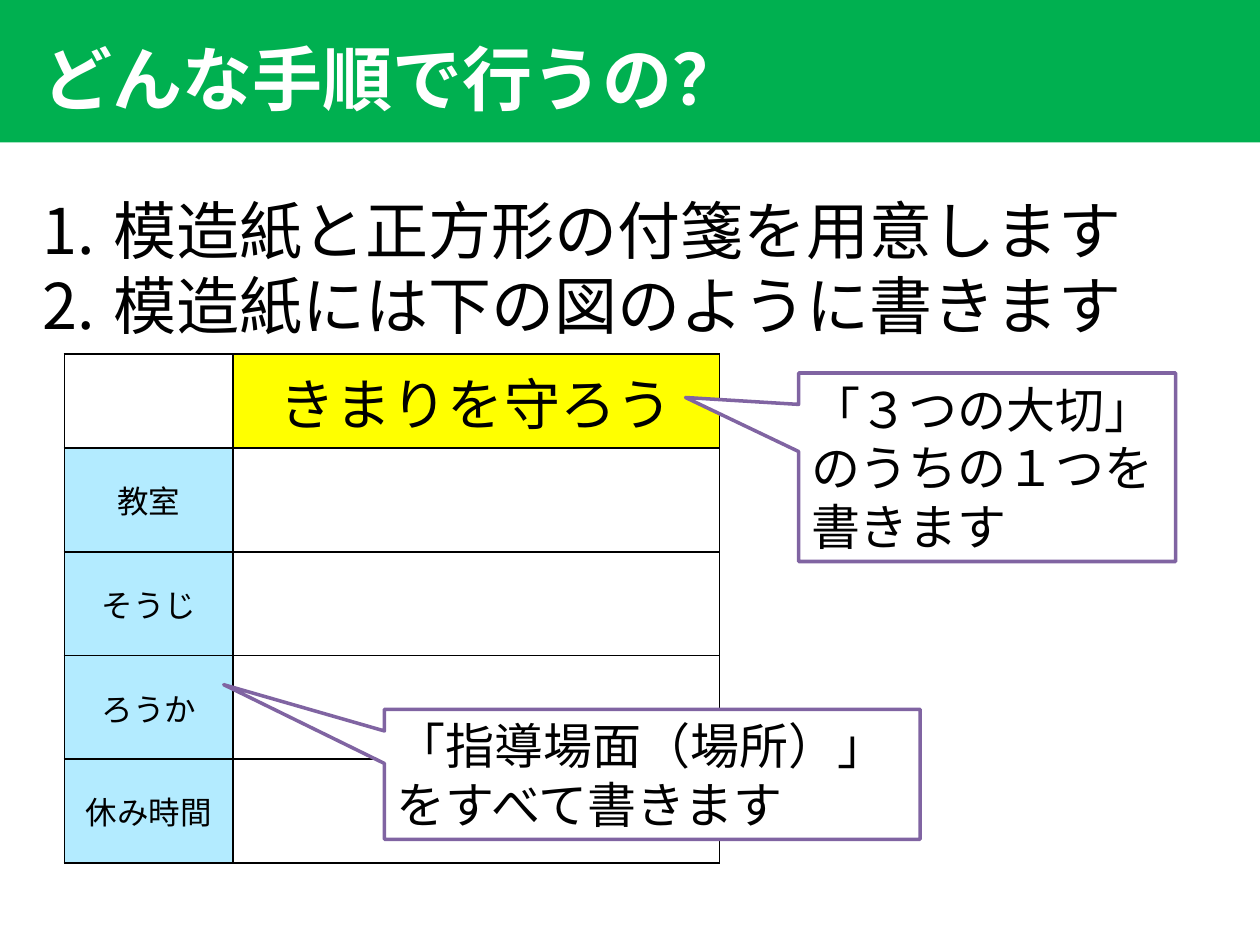
from lxml import etree
from pptx import Presentation
from pptx import util as u
from pptx.dml.color import RGBColor
from pptx.enum import shapes, text
from pptx.oxml import ns

COLORS = {
    "green": "00B050",
    "white": "FFFFFF",
    "black": "000000",
    "yellow": "FFFF00",
    "sky": "B3EBFF",
    "purple": "8064A2",
}


def sub(parent, tag, **attrs):
    return etree.SubElement(parent, ns.qn(tag), **attrs)


class Deck:
    font = "Arial"

    def __init__(self):
        self.prs = Presentation()
        self.prs.slide_width = u.Cm(25.4)
        self.prs.slide_height = u.Cm(19.05)
        self.s = self.prs.slides.add_slide(self.prs.slide_layouts[1])

    def color(self, name):
        return RGBColor.from_string(COLORS[name])

    def paint(self, obj, name):
        obj.fill.solid()
        obj.fill.fore_color.rgb = self.color(name)

    def style(self, p, size, color="black", bold=False, align=text.PP_ALIGN.LEFT):
        p.font.name = self.font
        p.font.size = u.Pt(size)
        p.font.bold = bold
        p.font.color.rgb = self.color(color)
        p.alignment = align

    def place(self, sp, box):
        sp.left, sp.top, sp.width, sp.height = (u.Cm(v) for v in box)

    def shape(self, kind, box, fill, line=None):
        sp = self.s.shapes.add_shape(kind, *(u.Cm(v) for v in box))
        sp.shadow.inherit = False
        self.paint(sp, fill)
        if line:
            sp.line.color.rgb = self.color(line)
            sp.line.width = u.Pt(2)
        else:
            sp.line.fill.background()
        return sp

    def title(self, words, box, bar_box):
        sp = self.s.shapes.title
        bar = self.shape(shapes.MSO_SHAPE.RECTANGLE, bar_box, "green")
        sp.element.addprevious(bar.element)
        self.place(sp, box)
        self.paint(sp, "green")
        tf = sp.text_frame
        tf.text = words
        tf.auto_size = text.MSO_AUTO_SIZE.NONE
        tf.vertical_anchor = text.MSO_ANCHOR.MIDDLE
        self.style(tf.paragraphs[0], 40, "white", True)

    def steps(self, lines, box):
        sp = self.s.placeholders[1]
        self.place(sp, box)
        tf = sp.text_frame
        tf.text = "\n".join(lines)
        tf.auto_size = text.MSO_AUTO_SIZE.NONE
        tf.vertical_anchor = text.MSO_ANCHOR.TOP
        indent = u.Cm(1.43)
        for p in tf.paragraphs:
            self.style(p, 36)
            p.space_before = u.Pt(0)
            pPr = p._p.get_or_add_pPr()
            pPr.set("marL", str(indent))
            pPr.set("indent", str(-indent))
            sub(pPr, "a:buFont", typeface="+mj-lt")
            sub(pPr, "a:buAutoNum", type="arabicPeriod")

    def borders(self, cell):
        tcPr = cell._tc.get_or_add_tcPr()
        for i, side in enumerate(("a:lnL", "a:lnR", "a:lnT", "a:lnB")):
            ln = sub(tcPr, side, w=str(u.Pt(1)))
            sub(sub(ln, "a:solidFill"), "a:srgbClr", val=COLORS["black"])
            tcPr.insert(i, ln)

    def table(self, rows, left, top, widths, heights):
        box = (left, top, sum(widths), sum(heights))
        tbl = self.s.shapes.add_table(
            len(heights), len(widths), *(u.Cm(v) for v in box)).table
        for col, width in zip(tbl.columns, widths):
            col.width = u.Cm(width)
        for row, height in zip(tbl.rows, heights):
            row.height = u.Cm(height)
        for r, row in enumerate(rows):
            for c, words in enumerate(row):
                cell = tbl.cell(r, c)
                cell.text = words
                cell.vertical_anchor = text.MSO_ANCHOR.MIDDLE
                fill = "white" if not words else "yellow" if r == 0 else "sky"
                self.paint(cell, fill)
                self.style(cell.text_frame.paragraphs[0], 32 if r == 0 else 18,
                           align=text.PP_ALIGN.CENTER)
                self.borders(cell)

    def callout(self, words, box, tip):
        sp = self.shape(shapes.MSO_SHAPE.RECTANGULAR_CALLOUT, box, "white", "purple")
        sp.adjustments[0], sp.adjustments[1] = tip
        tf = sp.text_frame
        tf.word_wrap = True
        tf.vertical_anchor = text.MSO_ANCHOR.MIDDLE
        tf.text = words
        self.style(tf.paragraphs[0], 28)


def main():
    d = Deck()
    d.title("どんな手順で行うの？", (0.61, 0.58, 25.1, 1.96), (0, 0, 25.4, 2.87))
    d.steps(["模造紙と正方形の付箋を用意します", "模造紙には下の図のように書きます"],
            (0.61, 3.73, 23.5, 11.02))
    places = ["教室", "そうじ", "ろうか", "休み時間"]
    d.table([("", "きまりを守ろう")] + [(place, "") for place in places],
            1.3, 7.14, [3.4, 9.8], [1.88] + [2.09] * len(places))
    d.callout("「３つの大切」のうちの１つを書きます", (16.1, 7.52, 7.6, 3.8), (-0.8, -0.37))
    d.callout("「指導場面（場所）」をすべて書きます", (7.75, 14.3, 10.8, 2.62), (-0.8, -0.69))
    d.prs.save("out.pptx")


if __name__ == "__main__":
    main()
